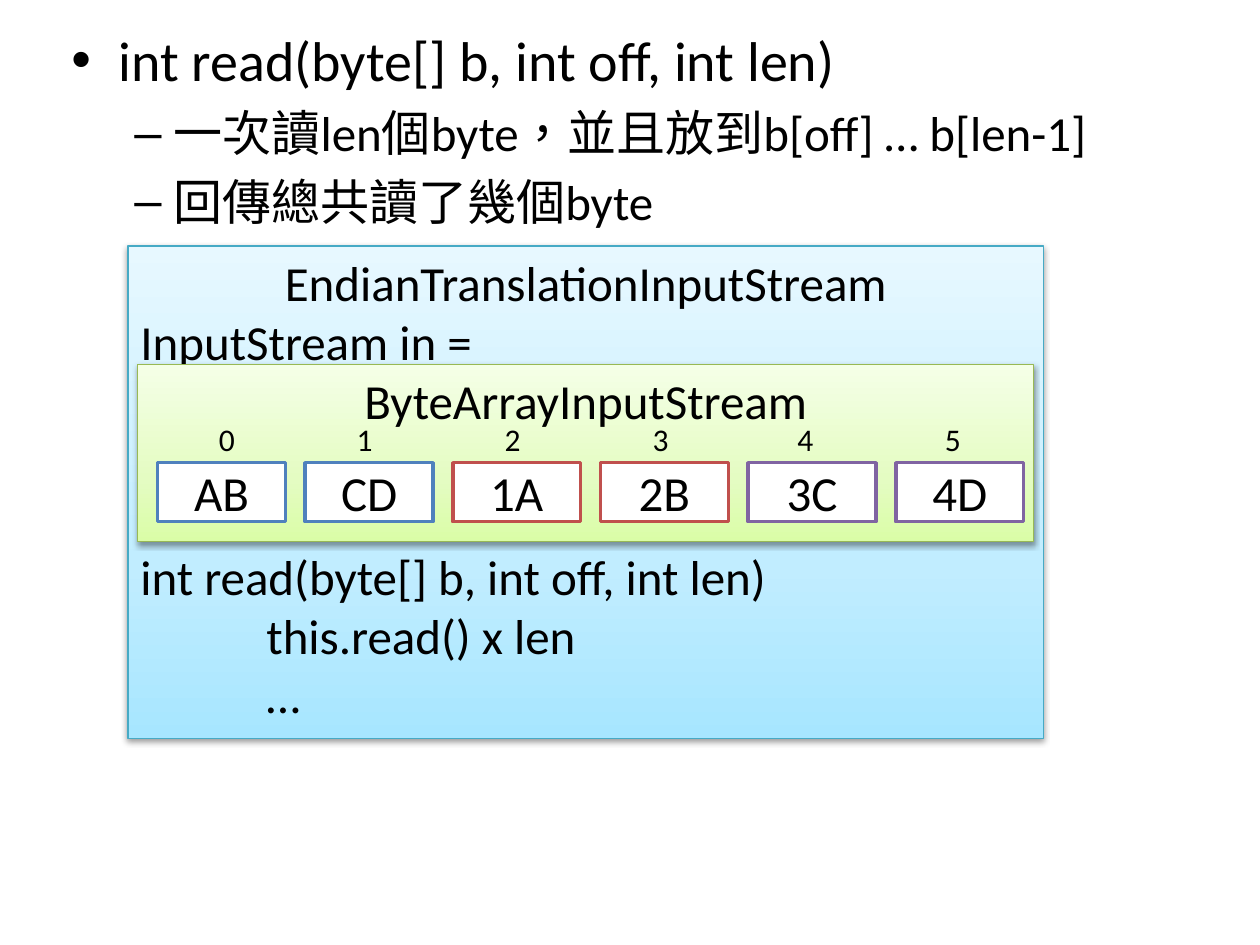
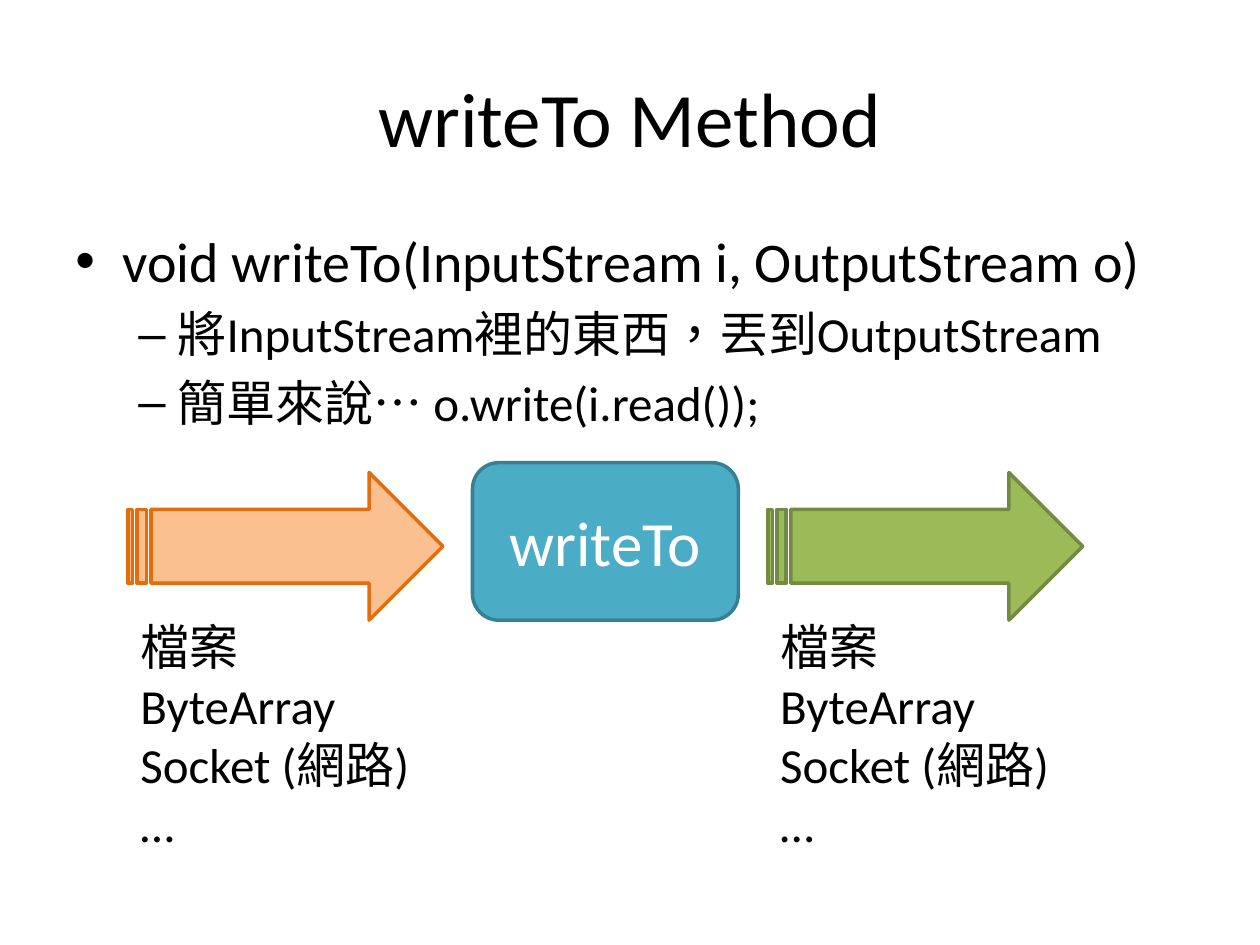
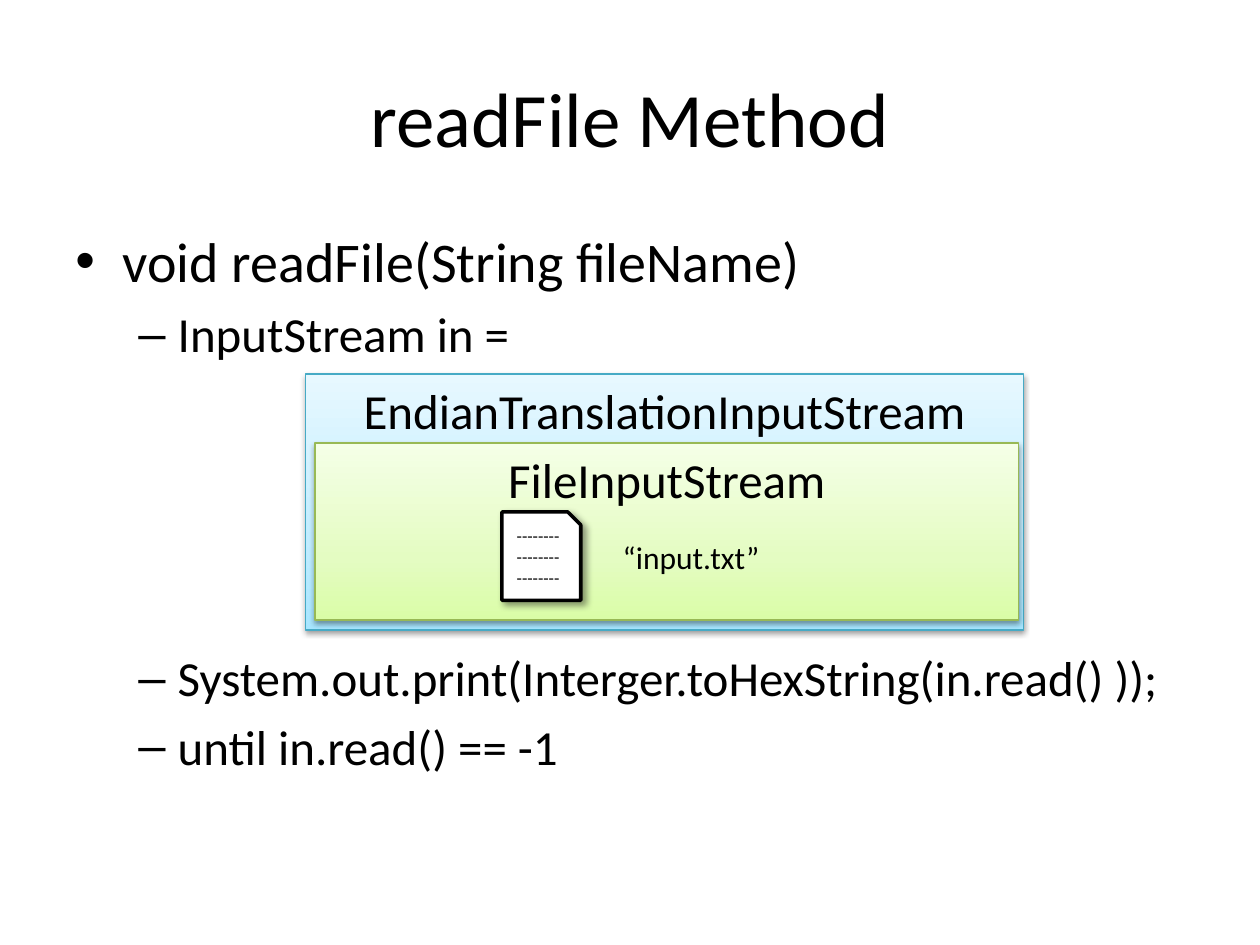
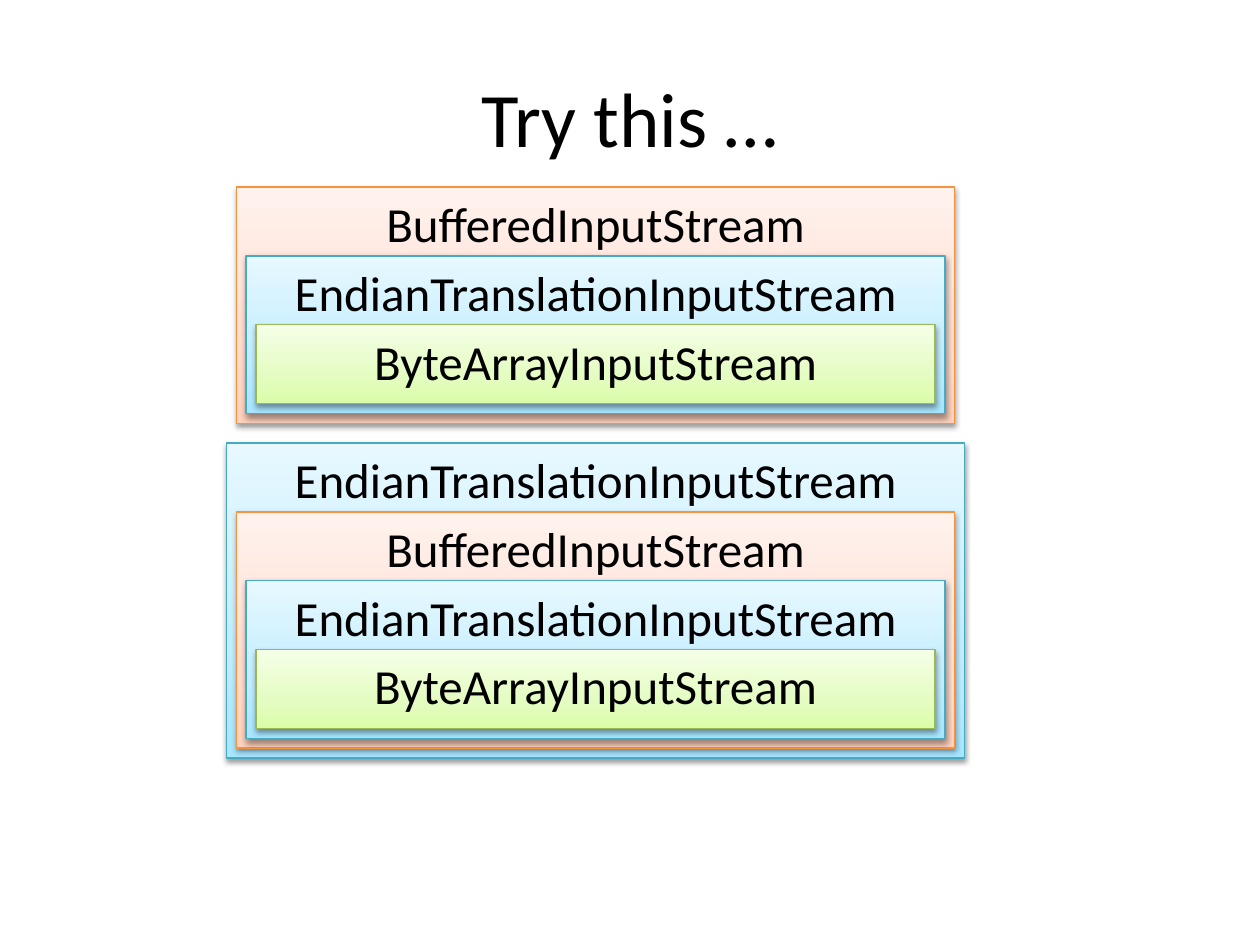
from dataclasses import dataclass

from lxml import etree
from pptx import Presentation
from pptx.dml.color import RGBColor
from pptx.enum.lang import MSO_LANGUAGE_ID
from pptx.enum.shapes import MSO_SHAPE
from pptx.enum.text import MSO_ANCHOR, PP_ALIGN
from pptx.oxml.ns import qn
from pptx.util import Pt

RECT = MSO_SHAPE.RECTANGLE
ROUNDED = MSO_SHAPE.ROUNDED_RECTANGLE
ARROW = MSO_SHAPE.STRIPED_RIGHT_ARROW
PAGE = MSO_SHAPE.SNIP_1_RECTANGLE
LEFT, CENTER = PP_ALIGN.LEFT, PP_ALIGN.CENTER
TOP, MIDDLE = MSO_ANCHOR.TOP, MSO_ANCHOR.MIDDLE
ZH_TW = MSO_LANGUAGE_ID.TRADITIONAL_CHINESE


@dataclass(frozen=True)
class Theme:
    font: str = "Calibri"
    black: str = "000000"
    white: str = "FFFFFF"
    blue: str = "4F81BD"
    red: str = "C0504D"
    purple: str = "8064A2"
    # Gradients run from the bottom (0 %) over 35 % to the top (100 %)
    aqua_fill: tuple = ("A7E6FF", "C1EDFF", "E7F8FF")
    aqua_line: str = "46AAC5"
    green_fill: tuple = ("DAFDA7", "E4FCC2", "F5FFE7")
    green_line: str = "98B955"
    orange_fill: tuple = ("FFD2BD", "FFDED0", "FFF2ED")
    orange_line: str = "F69240"
    arrow_in: tuple = ("FAC090", "E46C0A")
    arrow_out: tuple = ("9BBB59", "738A42")
    method: tuple = ("4BACC6", "377F92")
    # Shadows: opacity %, blur, distance, direction
    soft_shadow: tuple = (38, 3.15, 1.57, 90)
    page_shadow: tuple = (40, 4, 3, 45)
    title: int = 44
    method_size: int = 36
    bullet: int = 32
    text: int = 28
    label: int = 18
    tiny: int = 10


T = Theme()
TITLE_BOX = (36, 21.6, 648, 90)
AQUA = dict(fill=T.aqua_fill, line=T.aqua_line, shadow=T.soft_shadow)
GREEN = dict(fill=T.green_fill, line=T.green_line, shadow=T.soft_shadow)
ORANGE = dict(fill=T.orange_fill, line=T.orange_line, shadow=T.soft_shadow)
TOP_BULLET = dict(bullet="•", size=T.bullet, indent=27, hanging=27, before=6.4)
SUB_BULLET = dict(bullet="–", indent=58.5, hanging=22.5, before=5.6)


def write(frame, text, size=T.text, color=T.black, align=LEFT, indent=0,
          hanging=0, before=0, bullet=None):
    """Fill the frame's first paragraph, or add one below what is there."""
    paragraph = frame.paragraphs[0]
    if paragraph.runs:
        paragraph = frame.add_paragraph()
    paragraph.alignment = align
    paragraph.space_before = Pt(before)
    run = paragraph.add_run()
    run.text = text
    run.font.name = T.font
    run.font.size = Pt(size)
    run.font.color.rgb = RGBColor.from_string(color)
    run.font.language_id = ZH_TW
    properties = paragraph._p.get_or_add_pPr()
    properties.set("marL", str(Pt(indent)))
    properties.set("indent", str(-Pt(hanging)))
    if bullet:
        etree.SubElement(properties, qn("a:buFont"), typeface="Arial")
        etree.SubElement(properties, qn("a:buChar"), char=bullet)


def place(slide, box, kind=None, fill=T.white, line=T.black, width=2,
          shadow=None, anchor=TOP, wrap=True):
    """Add a preset shape, or a text box when no kind is given; return its text frame."""
    edges = [Pt(length) for length in box]
    if kind is None:
        part = slide.shapes.add_textbox(*edges)
    else:
        part = slide.shapes.add_shape(kind, *edges)
        if isinstance(fill, tuple):
            part.fill.gradient()
            part.fill.gradient_angle = 90
            stops = part.element.spPr.find(".//" + qn("a:gsLst"))
            stops.clear()
            for position, color in zip((0, 35, 100), fill):
                stop = etree.SubElement(stops, qn("a:gs"), pos=str(position * 1000))
                etree.SubElement(stop, qn("a:srgbClr"), val=color)
            width = 0.75
        else:
            part.fill.solid()
            part.fill.fore_color.rgb = RGBColor.from_string(fill)
        part.line.color.rgb = RGBColor.from_string(line)
        part.line.width = Pt(width)
        part.shadow.inherit = False
        if shadow:
            opacity, blur, distance, direction = shadow
            effects = part.element.spPr.find(qn("a:effectLst"))
            outer = etree.SubElement(
                effects, qn("a:outerShdw"), blurRad=str(Pt(blur)), dist=str(Pt(distance)),
                dir=str(direction * 60000), rotWithShape="0")
            tint = etree.SubElement(outer, qn("a:srgbClr"), val=T.black)
            etree.SubElement(tint, qn("a:alpha"), val=str(opacity * 1000))
    frame = part.text_frame
    frame.word_wrap = wrap
    frame.vertical_anchor = anchor
    return frame


deck = Presentation()
deck.slide_width, deck.slide_height = Pt(720), Pt(540)
blank = deck.slide_layouts[6]
read_slide, write_slide, file_slide, try_slide = [
    deck.slides.add_slide(blank) for _ in range(4)]

# Titles
for slide, title in ((write_slide, "writeTo Method"), (file_slide, "readFile Method"),
                     (try_slide, "Try this …")):
    write(place(slide, TITLE_BOX, anchor=MIDDLE), title, size=T.title, align=CENTER)

# Bullets
bullet_lists = (
    (read_slide, (33.75, 11.25, 648, 129.4), "int read(byte[] b, int off, int len)",
     ("一次讀len個byte，並且放到b[off] … b[len-1]", "回傳總共讀了幾個byte")),
    (write_slide, (36, 126, 648, 132.5), "void writeTo(InputStream i, OutputStream o)",
     ("將InputStream裡的東西，丟到OutputStream", "簡單來說… o.write(i.read());")),
    (file_slide, (36, 126, 648, 356.4), "void readFile(String fileName)",
     ("InputStream in =",)),
)
for slide, box, signature, details in bullet_lists:
    bullets = place(slide, box)
    write(bullets, signature, **TOP_BULLET)
    for detail in details:
        write(bullets, detail, **SUB_BULLET)

# The readFile list goes on below its diagram
write(bullets, "System.out.print(Interger.toHexString(in.read() ));",
      **{**SUB_BULLET, "before": 163})
write(bullets, "until in.read() == -1", **SUB_BULLET)

# Slide 1: the translating stream around the byte array stream
endian = place(read_slide, (73.13, 140.63, 523.13, 281.25), RECT, **AQUA)
write(endian, "EndianTranslationInputStream", align=CENTER)
write(endian, "InputStream in =")
write(endian, "int read(byte[] b, int off, int len)", before=101)
write(endian, "this.read() x len", indent=72)
write(endian, "…", indent=72)
byte_array = place(read_slide, (78.75, 208.13, 511.88, 101.25), RECT, **GREEN)
write(byte_array, "ByteArrayInputStream", align=CENTER)

# Bytes in coloured pairs, each under its index
byte_values = ("AB", "CD", "1A", "2B", "3C", "4D")
pair_colors = (T.blue, T.red, T.purple)
index_lefts = (118, 196.7, 281.3, 365.8, 448.6, 532.9)
for index, (value, index_left) in enumerate(zip(byte_values, index_lefts)):
    cell = place(read_slide, (90 + 84.38 * index, 264.4, 73.13, 33.75), RECT,
                 line=pair_colors[index // 2], anchor=MIDDLE)
    write(cell, value, align=CENTER)
    index_label = place(read_slide, (index_left, 236.3, 23.8, 29), wrap=False)
    write(index_label, str(index), size=T.label)

# Slide 2: source, writeTo, target
for left, (fill, line) in ((73.13, T.arrow_in), (438.75, T.arrow_out)):
    place(write_slide, (left, 270, 180, 84.38), ARROW, fill=fill, line=line)
    endpoints = place(write_slide, (left, 348.75, 170, 143.3))
    for endpoint in ("檔案", "ByteArray", "Socket (網路)", "…"):
        write(endpoints, endpoint)
method_fill, method_line = T.method
method = place(write_slide, (270, 264.4, 151.9, 90), ROUNDED, fill=method_fill,
               line=method_line, anchor=MIDDLE)
write(method, "writeTo", size=T.method_size, color=T.white, align=CENTER)

# Slide 3: the translating stream around the file stream
for stream, box, look in (
        ("EndianTranslationInputStream", (174.4, 213.75, 410.6, 146.25), AQUA),
        ("FileInputStream", (180, 253.13, 402, 101.25), GREEN)):
    write(place(file_slide, box, RECT, **look), stream, align=CENTER)
page = place(file_slide, (286.88, 292.5, 45, 50.63), PAGE, shadow=T.page_shadow)
write(page, "-" * 24, size=T.tiny, align=CENTER)
file_name = place(file_slide, (348.75, 303.75, 93, 29), wrap=False)
write(file_name, "“input.txt”", size=T.label)

# Slide 4: two stacks of nested streams, the second one level deeper
nesting = (("EndianTranslationInputStream", AQUA), ("BufferedInputStream", ORANGE),
           ("EndianTranslationInputStream", AQUA), ("ByteArrayInputStream", GREEN))
for stack_top, outermost in ((67.5, 1), (253.13, 0)):
    for depth, (stream, look) in enumerate(nesting):
        if depth >= outermost:
            box = (129.38 + 5.63 * depth, stack_top + 39.38 * depth,
                   421.88 - 11.25 * depth, 180 - 45 * depth)
            write(place(try_slide, box, RECT, **look), stream, align=CENTER)

deck.save("out.pptx")
